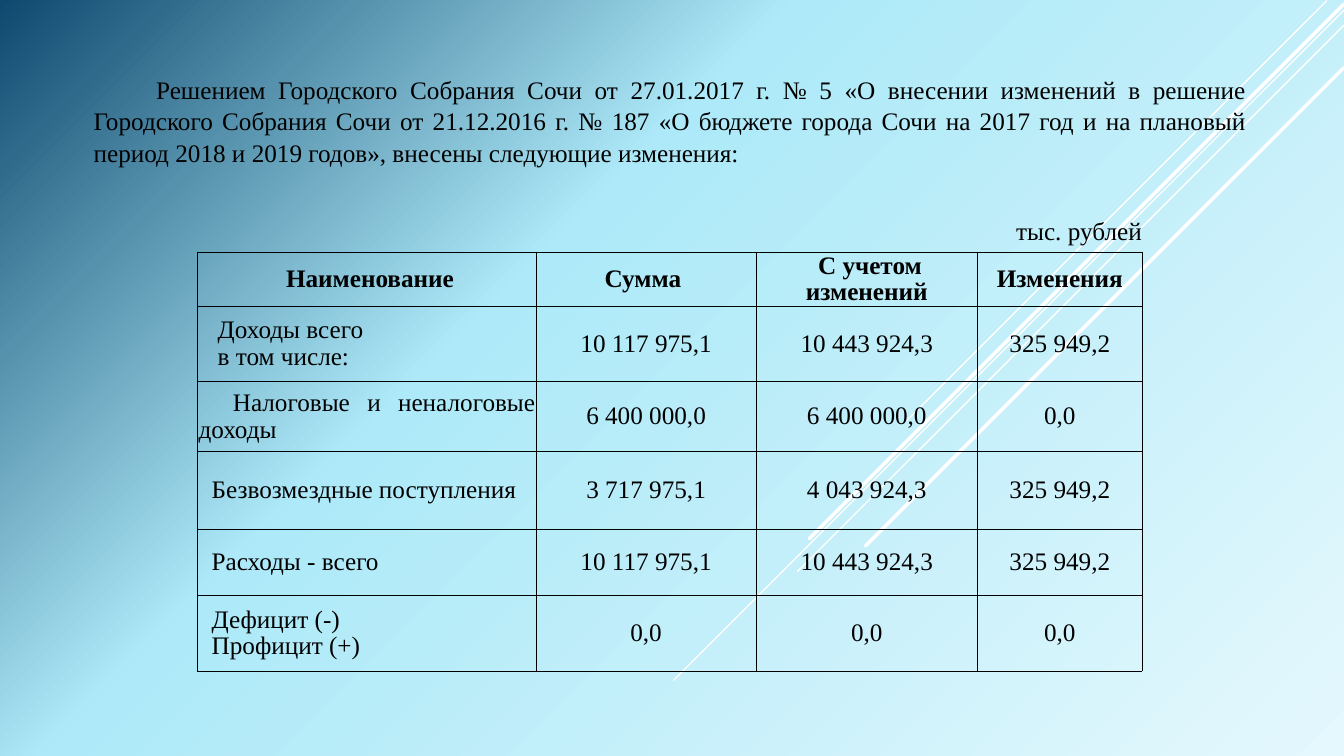
from lxml.etree import SubElement
from pptx import Presentation
from pptx.dml.color import RGBColor
from pptx.enum.shapes import MSO_CONNECTOR
from pptx.enum.text import MSO_ANCHOR, MSO_AUTO_SIZE, PP_ALIGN
from pptx.oxml import parse_xml
from pptx.oxml.ns import nsdecls, qn
from pptx.util import Inches, Pt

THEME = {
    "font": "Times New Roman", "size": Pt(18), "ink": "000000", "ray": "FFFFFF",
    "border": Pt(0.5), "thin": Pt(1), "thick": Pt(2.5),
    "background": [(0, "E4F8FD"), (62, "ADE9F8"), (100, "0F496F")],
}

presentation = Presentation()
presentation.slide_width = Inches(13.33)
presentation.slide_height = Inches(7.5)
slide = presentation.slides.add_slide(presentation.slide_layouts[6])


def share(horizontal, vertical):
    """Turn percentages of the slide's width and height into lengths."""
    return (int(presentation.slide_width * horizontal / 100),
            int(presentation.slide_height * vertical / 100))


def write(frame, lines, alignment, bold=False, left=0, first=0, spacing=1.0):
    """Fill a text frame; left and first are indents in inches."""
    for number, line in enumerate(lines):
        paragraph = frame.paragraphs[0] if number == 0 else frame.add_paragraph()
        paragraph.alignment = alignment
        paragraph.line_spacing = spacing
        properties = paragraph._p.get_or_add_pPr()
        properties.set("marL", str(Inches(left)))
        properties.set("indent", str(Inches(first)))
        run = paragraph.add_run()
        run.text = line
        formats = {"name": THEME["font"], "size": THEME["size"], "bold": bold}
        for name, value in formats.items():
            setattr(run.font, name, value)
        run.font.color.rgb = RGBColor.from_string(THEME["ink"])


# Background: radial gradient centred on the bottom right corner
slide.background.fill.solid()
background = slide.element.find(".//" + qn("p:bgPr"))
stops = "".join(f'<a:gs pos="{position * 1000}"><a:srgbClr val="{color}"/></a:gs>'
                for position, color in THEME["background"])
gradient = parse_xml(
    f'<a:gradFill {nsdecls("a")} rotWithShape="1"><a:gsLst>{stops}</a:gsLst>'
    '<a:path path="circle"><a:fillToRect l="100000" t="100000"/></a:path></a:gradFill>')
background.replace(background.find(qn("a:solidFill")), gradient)

# Diagonal rays at 45 degrees: start, length across, weight
rays = [
    (98.7, 0.13, 31.2, "thin"),
    (100, 1.33, 49.88, "thin"),
    (100, 3.33, 40.65, "thin"),
    (100, 0.53, 39.8, "thick"),
    (100, 8.93, 35.6, "thick"),
]
for start_x, start_y, length, weight in rays:
    x, y = share(start_x, start_y)
    reach, _ = share(length, 0)
    ray = slide.shapes.add_connector(MSO_CONNECTOR.STRAIGHT, x, y, x - reach, y + reach)
    ray.line.color.rgb = RGBColor.from_string(THEME["ray"])
    ray.line.width = THEME[weight]
    ray.line._get_or_add_ln().set("cap", "rnd")
    SubElement(ray._element.spPr, qn("a:effectLst"))

# Budget table: each row has label lines, left indent, first-line indent, amounts
headings = [" Наименование", "Сумма ", " С учетом изменений", "Изменения"]
budget = [
    (["Доходы всего", "в том числе:"], 0.19, 0, ["10 117 975,1", "10 443 924,3", "325 949,2"]),
    (["Налоговые и неналоговые доходы"], 0, 0.34, ["6 400 000,0", "6 400 000,0", "0,0"]),
    (["Безвозмездные поступления"], 0.13, 0, ["3 717 975,1", "4 043 924,3", "325 949,2"]),
    (["Расходы - всего"], 0.13, 0, ["10 117 975,1", "10 443 924,3", "325 949,2"]),
    (["Дефицит (-)", "Профицит (+)"], 0.13, 0, ["0,0", "0,0", "0,0"]),
]
column_shares = [25.2, 16.35, 16.5, 12.23]
row_shares = [5.87, 10, 9.2, 10.4, 8.67, 10]
table = slide.shapes.add_table(
    len(row_shares), len(column_shares), *share(14.7, 33.33),
    *share(sum(column_shares), sum(row_shares))).table
table.first_row = table.horz_banding = False
for column, width in zip(table.columns, column_shares):
    column.width = share(width, 0)[0]
for row, height in zip(table.rows, row_shares):
    row.height = share(0, height)[1]

for index, heading in enumerate(headings):
    write(table.cell(0, index).text_frame, [heading], PP_ALIGN.CENTER, bold=True, spacing=0.95)
for index, (label, left, first, amounts) in enumerate(budget, 1):
    write(table.cell(index, 0).text_frame, label, PP_ALIGN.JUSTIFY,
          left=left, first=first, spacing=0.95)
    for column, amount in enumerate(amounts, 1):
        write(table.cell(index, column).text_frame, [amount], PP_ALIGN.CENTER, spacing=0.95)

# Cell margins, clear fill and thin borders
cell_format = {
    "vertical_anchor": MSO_ANCHOR.MIDDLE, "margin_left": Inches(0.01),
    "margin_right": Inches(0.01), "margin_top": Inches(0.01), "margin_bottom": 0,
}
for cell in table.iter_cells():
    for name, value in cell_format.items():
        setattr(cell, name, value)
    cell.fill.background()
    for position, side in enumerate(["lnL", "lnR", "lnT", "lnB"]):
        cell._tc.tcPr.insert(position, parse_xml(
            f'<a:{side} {nsdecls("a")} w="{THEME["border"]}"><a:solidFill>'
            f'<a:srgbClr val="{THEME["ink"]}"/></a:solidFill></a:{side}>'))

# Unit note and introduction: left, top, width, height, text, alignment, indent, spacing
captions = [
    (74.87, 27.87, 14.33, 5.33, "тыс. рублей", PP_ALIGN.LEFT, 0, 1.0),
    (6.23, 8.93, 87.25, 13.47,
     "Решением Городского Собрания Сочи от 27.01.2017 г. № 5 «О внесении изменений "
     "в решение Городского Собрания Сочи от 21.12.2016 г. № 187 «О бюджете города Сочи "
     "на 2017 год и на плановый период 2018 и 2019 годов», внесены следующие изменения:",
     PP_ALIGN.JUSTIFY, 0.62, 1.05),
]
for left, top, width, height, text, alignment, indent, spacing in captions:
    frame = slide.shapes.add_textbox(*share(left, top), *share(width, height)).text_frame
    frame.word_wrap = True
    frame.auto_size = MSO_AUTO_SIZE.SHAPE_TO_FIT_TEXT
    write(frame, [text], alignment, first=indent, spacing=spacing)

presentation.save("out.pptx")
